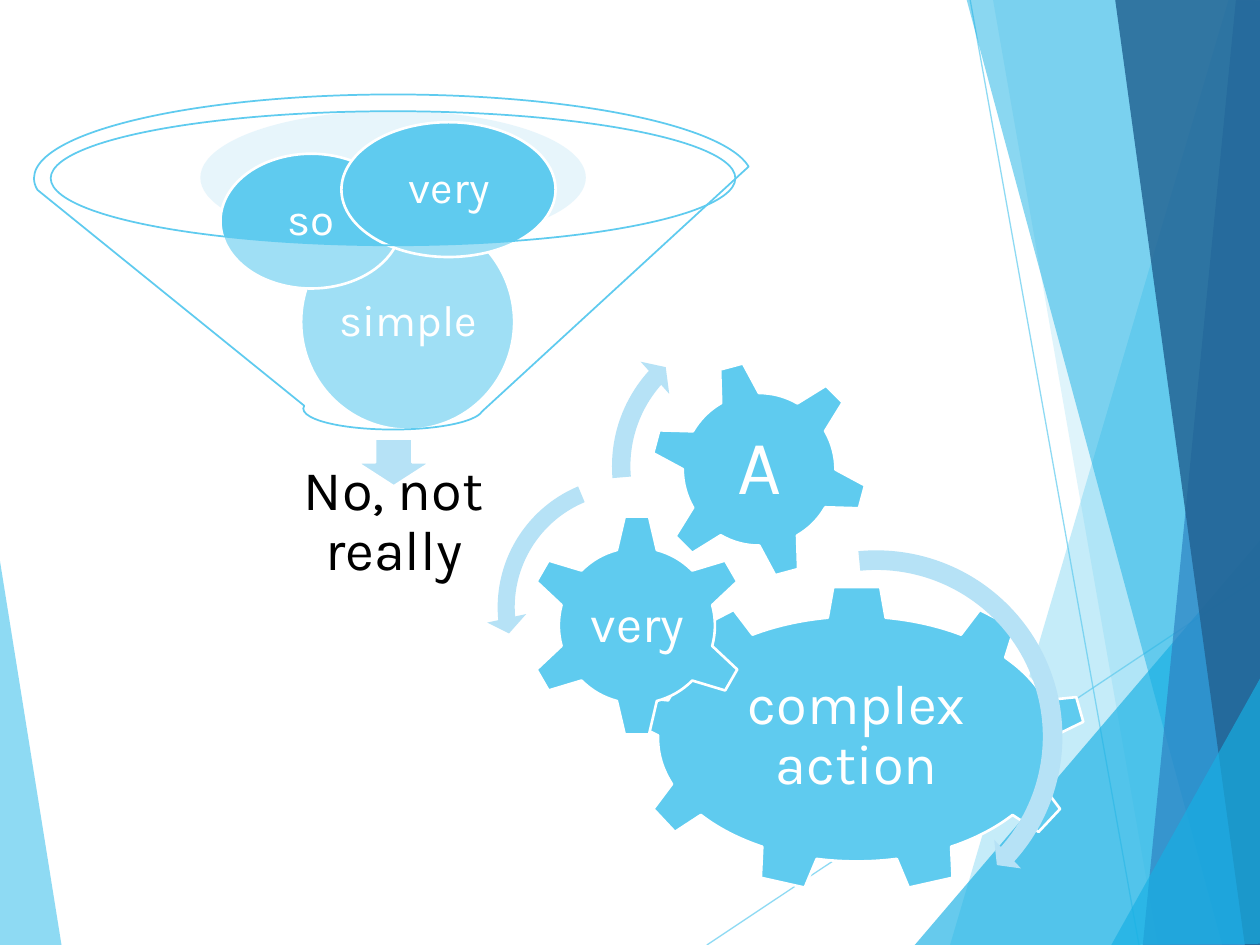
"""Build a slide with a funnel of simple words beside three turning gears."""
from dataclasses import dataclass

import pptx
from lxml import etree
from pptx import util as u
from pptx.dml import color
from pptx.enum import shapes, text
from pptx.oxml.ns import qn
from pptx.shapes import autoshape as auto
from pptx.slide import Slide

Kind = shapes.MSO_SHAPE


@dataclass(frozen=True)
class Theme:
    font: str = "Karla"
    sky: str = "5FCBEF"
    cyan: str = "17B0E4"
    blue: str = "2E83C3"
    navy: str = "226292"
    pale: str = "B6E2F6"
    mist: str = "C5E7F7"
    white: str = "FFFFFF"
    black: str = "000000"
    huge: int = 44
    large: int = 32
    medium: int = 29
    small: int = 25
    edge: float = 1.5
    rim: float = 1
    hair: float = 0.75


T = Theme()


@dataclass(frozen=True)
class Facet:
    points: tuple
    fill: str
    alpha: int


@dataclass(frozen=True)
class Form:
    kind: Kind
    box: tuple
    fill: str = T.sky
    line: str | None = T.white
    width: float = T.edge
    alpha: int = 100
    turn: float = 0
    adjust: tuple = ()


@dataclass(frozen=True)
class Label:
    words: str
    box: tuple
    size: int
    ink: str = T.white
    inset: float = 0.03


RAYS = (((5.61, 7.5), (10.01, 4.57)), ((7.7, 0), (9.04, 7.5)))

FACETS = (
    Facet(((-0.01, 4.39), (0.49, 7.51), (-0.01, 7.5)), T.sky, 70),
    Facet(((9.75, 0), (7.54, 7.5), (10.02, 7.51), (10.01, 0.01)), T.sky, 36),
    Facet(((7.88, -0.01), (9.19, 7.5), (10.01, 7.5), (10.01, -0.01)), T.sky, 20),
    Facet(((7.26, 7.5), (10, 4.29), (10.01, 7.5)), T.cyan, 66),
    Facet(((7.67, -0.01), (9.7, 7.5), (10.01, 7.49), (10.01, -0.01)), T.cyan, 50),
    Facet(((9.81, -0.01), (9.07, 7.5), (10.01, 7.5), (10, -0.01)), T.blue, 70),
    Facet(((8.85, -0.01), (9.88, 7.5), (10.02, 7.5), (10, -0.01)), T.navy, 82),
    Facet(((8.82, 7.5), (10.02, 5.35), (10.02, 7.49)), T.cyan, 66),
)

GEARS = (
    Form(Kind.GEAR_9, (4.98, 4.65, 3.64, 2.43)),
    Label("complex action", (5.62, 5.22, 2.36, 1.25), T.large, inset=0.04),
    Form(Kind.GEAR_6, (4.17, 4.08, 1.77, 1.77)),
    Label("very", (4.62, 4.53, 0.88, 0.87), T.medium, inset=0.04),
    Form(Kind.GEAR_6, (5.16, 2.86, 1.73, 1.73), turn=345),
    Label("A", (5.54, 3.24, 0.97, 0.97), T.huge, inset=0.06),
    Form(Kind.CIRCULAR_ARROW, (5.4, 4.29, 3.11, 3.11), T.pale, None,
         adjust=(0.05, 2.99, 25.12, 158.69, 0.05)),
    Form(Kind.LEFT_CIRCULAR_ARROW, (3.86, 3.69, 2.26, 2.26), T.pale, None,
         adjust=(0.06, 4.3, 104.89, 148.38, 0.07)),
    Form(Kind.CIRCULAR_ARROW, (4.76, 2.48, 2.44, 2.44), T.pale, None,
         adjust=(0.06, 3.94, 133.14, 105.08, 0.07)),
)

FUNNEL = (
    Form(Kind.OVAL, (1.59, 0.88, 3.06, 1.06), T.mist, None, alpha=40),
    Form(Kind.DOWN_ARROW, (2.83, 3.48, 0.59, 0.38), T.pale),
    Label("No, not really", (1.7, 3.79, 2.85, 0.71), T.large, T.black, 0.25),
    Form(Kind.OVAL, (2.39, 1.7, 1.69, 1.71)),
    Label("simple", (2.64, 1.95, 1.2, 1.21), T.small),
    Form(Kind.OVAL, (1.75, 1.22, 1.44, 1.07)),
    Label("so", (1.96, 1.38, 1.02, 0.76), T.small),
    Form(Kind.OVAL, (2.71, 0.97, 1.7, 1.07)),
    Label("very", (2.96, 1.12, 1.21, 0.76), T.small),
    Form(Kind.FUNNEL, (0.27, 0.75, 5.7, 2.66), T.white, T.sky, T.rim, alpha=40),
)


def tint(fill, shade: str, alpha: int = 100) -> None:
    fill.solid()
    fill.fore_color.rgb = color.RGBColor.from_string(shade)
    if alpha < 100:
        node = fill._xPr.find(qn("a:solidFill"))[0]
        etree.SubElement(node, qn("a:alpha"), val=str(alpha * 1000))


def paint(shape: auto.Shape, fill: str, alpha: int, line: str | None = None,
          width: float = 0) -> None:
    shape.shadow.inherit = False
    tint(shape.fill, fill, alpha)
    if line:
        tint(shape.line.fill, line)
        shape.line.width = u.Pt(width)
    else:
        shape.line.fill.background()


def add_ray(slide: Slide, start: tuple, end: tuple) -> None:
    ends = map(u.Inches, start + end)
    ray = slide.shapes.add_connector(shapes.MSO_CONNECTOR.STRAIGHT, *ends)
    ray.line.width = u.Pt(T.hair)
    tint(ray.line.fill, T.sky, 70)
    etree.SubElement(ray._element.spPr, qn("a:effectLst"))


def add_facet(slide: Slide, facet: Facet) -> None:
    first, *rest = [(u.Inches(x), u.Inches(y)) for x, y in facet.points]
    pen = slide.shapes.build_freeform(*first)
    pen.add_line_segments(rest, close=True)
    paint(pen.convert_to_shape(), facet.fill, facet.alpha)


def add_form(slide: Slide, form: Form) -> None:
    shape = slide.shapes.add_shape(form.kind, *map(u.Inches, form.box))
    shape.rotation = form.turn
    for index, value in enumerate(form.adjust):
        shape.adjustments[index] = value
    paint(shape, form.fill, form.alpha, form.line, form.width)


def add_label(slide: Slide, label: Label) -> None:
    frame = slide.shapes.add_textbox(*map(u.Inches, label.box)).text_frame
    frame.word_wrap = True
    frame.vertical_anchor = text.MSO_ANCHOR.MIDDLE
    frame.margin_left = frame.margin_right = u.Inches(label.inset)
    frame.margin_top = frame.margin_bottom = u.Inches(label.inset)
    para = frame.paragraphs[0]
    para.text = label.words
    para.alignment = text.PP_ALIGN.CENTER
    para.line_spacing = 0.9
    para.font.name = T.font
    para.font.size = u.Pt(label.size)
    para.font.color.rgb = color.RGBColor.from_string(label.ink)


def main() -> None:
    deck = pptx.Presentation()
    deck.slide_width, deck.slide_height = u.Inches(10), u.Inches(7.5)
    slide = deck.slides.add_slide(deck.slide_layouts[6])
    for start, end in RAYS:
        add_ray(slide, start, end)
    for facet in FACETS:
        add_facet(slide, facet)
    for item in GEARS + FUNNEL:
        if isinstance(item, Label):
            add_label(slide, item)
        else:
            add_form(slide, item)
    deck.save("out.pptx")


if __name__ == "__main__":
    main()
